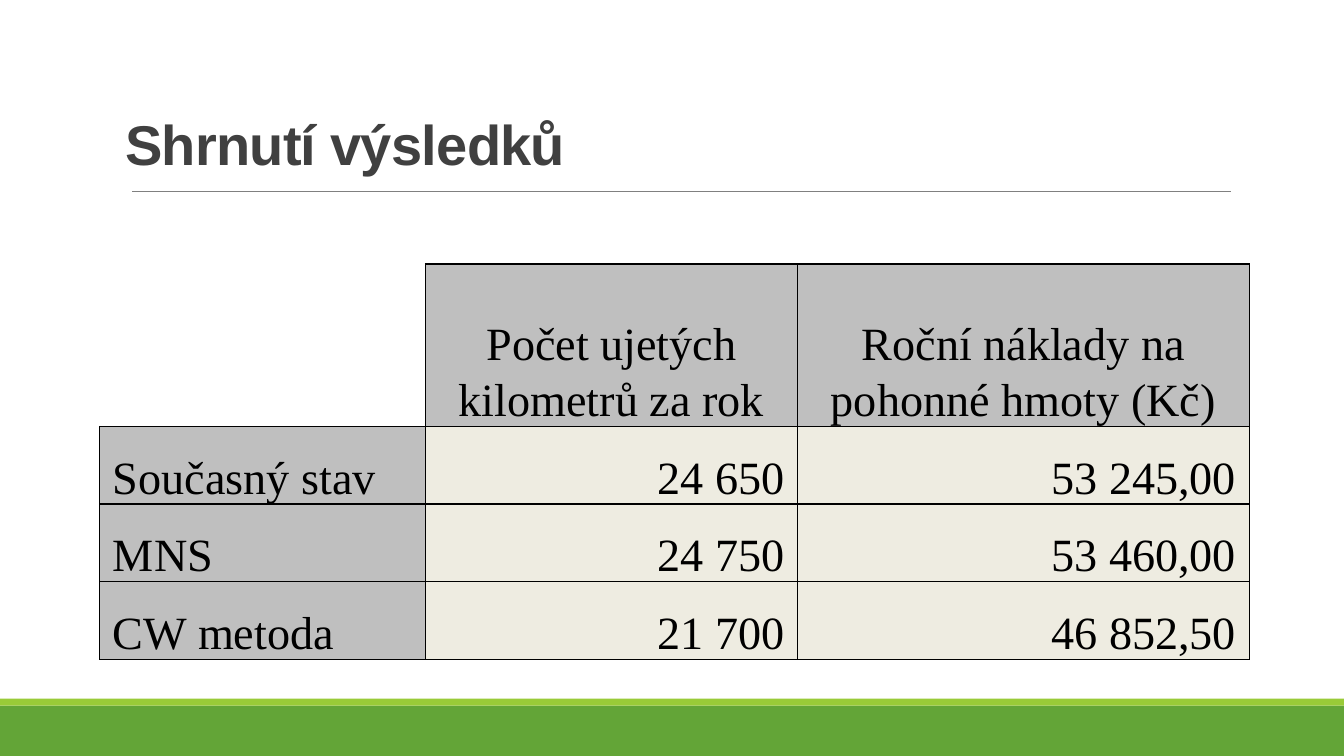
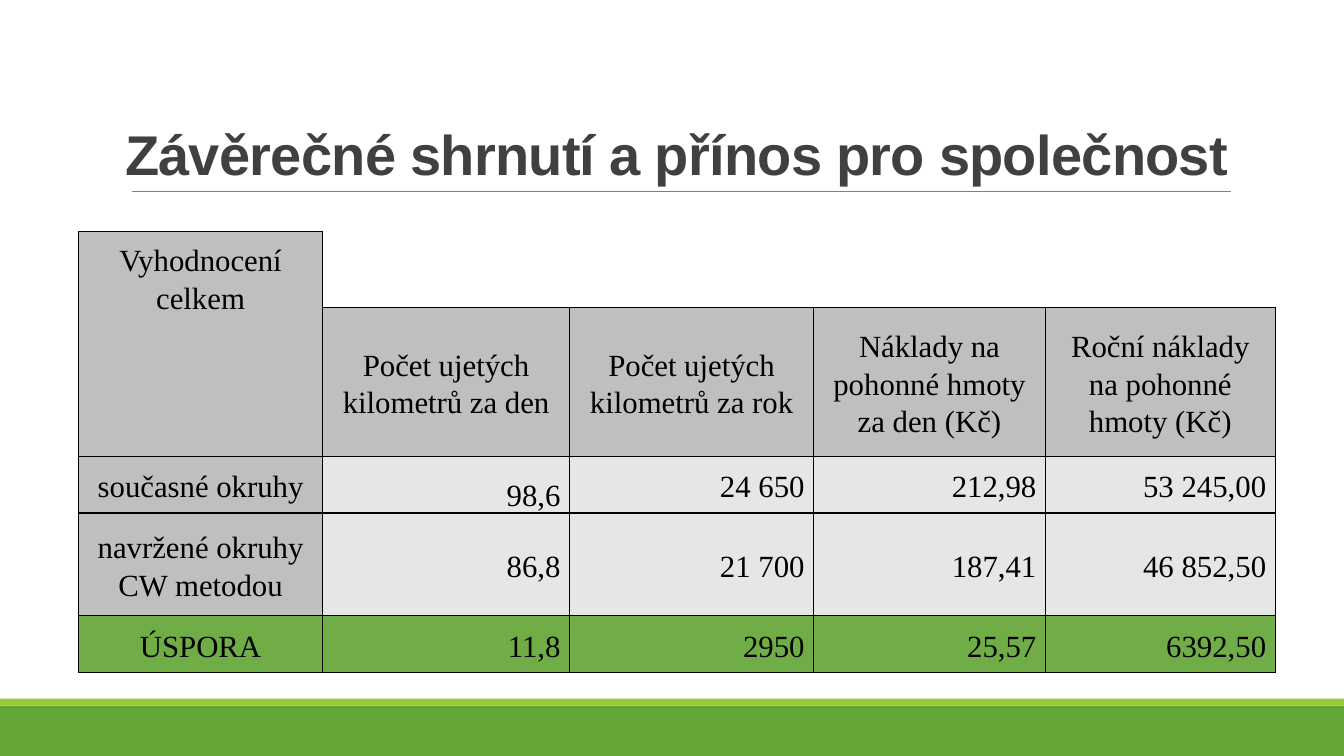
from lxml import etree
from pptx import Presentation
from pptx.dml.color import RGBColor
from pptx.enum.shapes import MSO_CONNECTOR, MSO_SHAPE
from pptx.enum.text import MSO_ANCHOR, MSO_AUTO_SIZE, PP_ALIGN
from pptx.oxml.ns import qn
from pptx.util import Inches, Pt

RECT, STRAIGHT = MSO_SHAPE.RECTANGLE, MSO_CONNECTOR.STRAIGHT
LEFT, CENTER, RIGHT = PP_ALIGN.LEFT, PP_ALIGN.CENTER, PP_ALIGN.RIGHT
TOP, MIDDLE, BOTTOM = MSO_ANCHOR.TOP, MSO_ANCHOR.MIDDLE, MSO_ANCHOR.BOTTOM
NO_FIT = MSO_AUTO_SIZE.NONE
TITLE_ONLY = 5
EMPTY = "-"
SIDES = {"lnL": (0, -1), "lnR": (0, 1), "lnT": (-1, 0), "lnB": (1, 0)}
COLORS = {
    "band": "63A537", "stripe": "99CB38", "rule": "808080",
    "title": "404040", "text": "000000", "border": "000000",
    "h": "BFBFBF", "cream": "EEECE1", "v": "E7E6E6", "s": "70AD47",
}


class Deck:
    """Holds the style and the current slide; lengths are percent of the slide."""

    def __init__(self, prs):
        self.prs = prs
        self.s = None

    def x(self, share):
        return round(self.prs.slide_width * share / 100)

    def y(self, share):
        return round(self.prs.slide_height * share / 100)

    def box(self, left, top, width, height):
        return self.x(left), self.y(top), self.x(width), self.y(height)

    def color(self, name):
        return RGBColor.from_string(COLORS[name])

    def slide(self, title, *box):
        self.s = self.prs.slides.add_slide(self.prs.slide_layouts[TITLE_ONLY])
        self.band("band", 93.33, 6.67)
        self.band("stripe", 92.4, 0.93)
        self.rule(9.83, 91.6, 25.33)
        self.title(title, *box)

    def band(self, color, top, height):
        sp = self.s.shapes.add_shape(RECT, *self.box(0, top, 100, height))
        sp.shadow.inherit = False
        sp.fill.solid()
        sp.fill.fore_color.rgb = self.color(color)
        sp.line.fill.background()

    def rule(self, start, end, top):
        line = self.s.shapes.add_connector(
            STRAIGHT, self.x(start), self.y(top), self.x(end), self.y(top))
        line.line.color.rgb = self.color("rule")
        line.line.width = Pt(0.5)
        etree.SubElement(line._element.spPr, qn("a:effectLst"))

    def title(self, text, *box):
        sp = self.s.shapes.title
        sp.left, sp.top, sp.width, sp.height = self.box(*box)
        tf = sp.text_frame
        tf.text = text
        tf.word_wrap = True
        tf.auto_size = NO_FIT
        tf.vertical_anchor = BOTTOM
        p = tf.paragraphs[0]
        p.line_spacing = 0.85
        self.format(p, LEFT, "Arial", 40, "title", True)
        p.runs[0]._r.get_or_add_rPr().set("spc", "-50")

    def format(self, p, align, font, size, color, bold=False):
        p.alignment = align
        p.font.name = font
        p.font.size = Pt(size)
        p.font.bold = bold
        p.font.color.rgb = self.color(color)

    def table(self, left, top, cols, rows, size, anchor, label_align, pad, value="v"):
        heights, codes, texts = zip(*rows)
        frame = self.s.shapes.add_table(
            len(rows), len(cols), *self.box(left, top, sum(cols), sum(heights)))
        table = frame.table
        table.first_row = table.horz_banding = False
        for col, width in zip(table.columns, cols):
            col.width = self.x(width)
        for row, height in zip(table.rows, heights):
            row.height = self.y(height)
        for r, line in enumerate(codes):
            for c, code in enumerate(line):
                cell = table.cell(r, c)
                self.borders(cell, codes, r, c)
                cell.vertical_anchor = anchor
                self.margins(cell, pad, 0.02, 0)
                if code == EMPTY:
                    cell.fill.background()
                    continue
                cell.fill.solid()
                cell.fill.fore_color.rgb = self.color(value if code == "v" else code)
                cell.text = texts[r][c]
                p = cell.text_frame.paragraphs[0]
                p.line_spacing = 1.1
                align = label_align if c == 0 else CENTER if code == "h" else RIGHT
                self.format(p, align, "Times New Roman", size, "text")
        return table

    def margins(self, cell, side, top, bottom):
        cell.margin_left = cell.margin_right = Inches(side)
        cell.margin_top, cell.margin_bottom = Inches(top), Inches(bottom)

    def borders(self, cell, codes, r, c):
        tcPr = cell._tc.get_or_add_tcPr()
        for tag, (dr, dc) in SIDES.items():
            row, col = r + dr, c + dc
            inside = 0 <= row < len(codes) and 0 <= col < len(codes[0])
            beyond = codes[row][col] if inside else EMPTY
            ln = etree.SubElement(tcPr, qn("a:" + tag), w=str(Pt(1)))
            if codes[r][c] == beyond == EMPTY:
                etree.SubElement(ln, qn("a:noFill"))
            else:
                fill = etree.SubElement(ln, qn("a:solidFill"))
                etree.SubElement(fill, qn("a:srgbClr"), val=COLORS["border"])


def main():
    prs = Presentation()
    prs.slide_width, prs.slide_height = Inches(13.33), Inches(7.5)
    deck = Deck(prs)

    deck.slide("Shrnutí výsledků", 8.55, 8.53, 84.32, 15.6)
    deck.table(7.43, 34.93, [24.23, 27.68, 33.61], [
        (21.47, "-hh", ["", "Počet ujetých kilometrů za rok",
                        "Roční náklady na pohonné hmoty (Kč)"]),
        (10.27, "hvv", ["Současný stav", "24 650", "53 245,00"]),
        (10.27, "hvv", ["MNS", "24 750", "53 460,00"]),
        (10.27, "hvv", ["CW metoda", "21 700", "46 852,50"]),
    ], 33, BOTTOM, LEFT, 0.13, "cream")

    deck.slide("Závěrečné shrnutí a přínos pro společnost", 8.55, 1.2, 84.55, 24.13)
    table = deck.table(5.85, 30.67, [18.15, 18.38, 18.15, 17.25, 17.1], [
        (10, "h----", ["Vyhodnocení celkem", "", "", "", ""]),
        (19.73, "hhhhh", ["", "Počet ujetých kilometrů za den",
                          "Počet ujetých kilometrů za rok",
                          "Náklady na pohonné hmoty za den (Kč)",
                          "Roční náklady na pohonné hmoty (Kč)"]),
        (7.47, "hvvvv", ["současné okruhy", "98,6", "24 650", "212,98", "53 245,00"]),
        (13.6, "hvvvv", ["navržené okruhy CW metodou", "86,8", "21 700", "187,41",
                         "46 852,50"]),
        (7.47, "sssss", ["ÚSPORA", "11,8", "2950", "25,57", "6392,50"]),
    ], 22, MIDDLE, CENTER, 0.09)
    corner = table.cell(0, 0)
    corner.merge(table.cell(1, 0))
    corner.vertical_anchor = TOP
    deck.margins(corner, 0.18, 0.09, 0.09)
    table.cell(0, 1).merge(table.cell(0, 4))
    table.cell(2, 1).vertical_anchor = BOTTOM

    prs.save("out.pptx")


if __name__ == "__main__":
    main()
